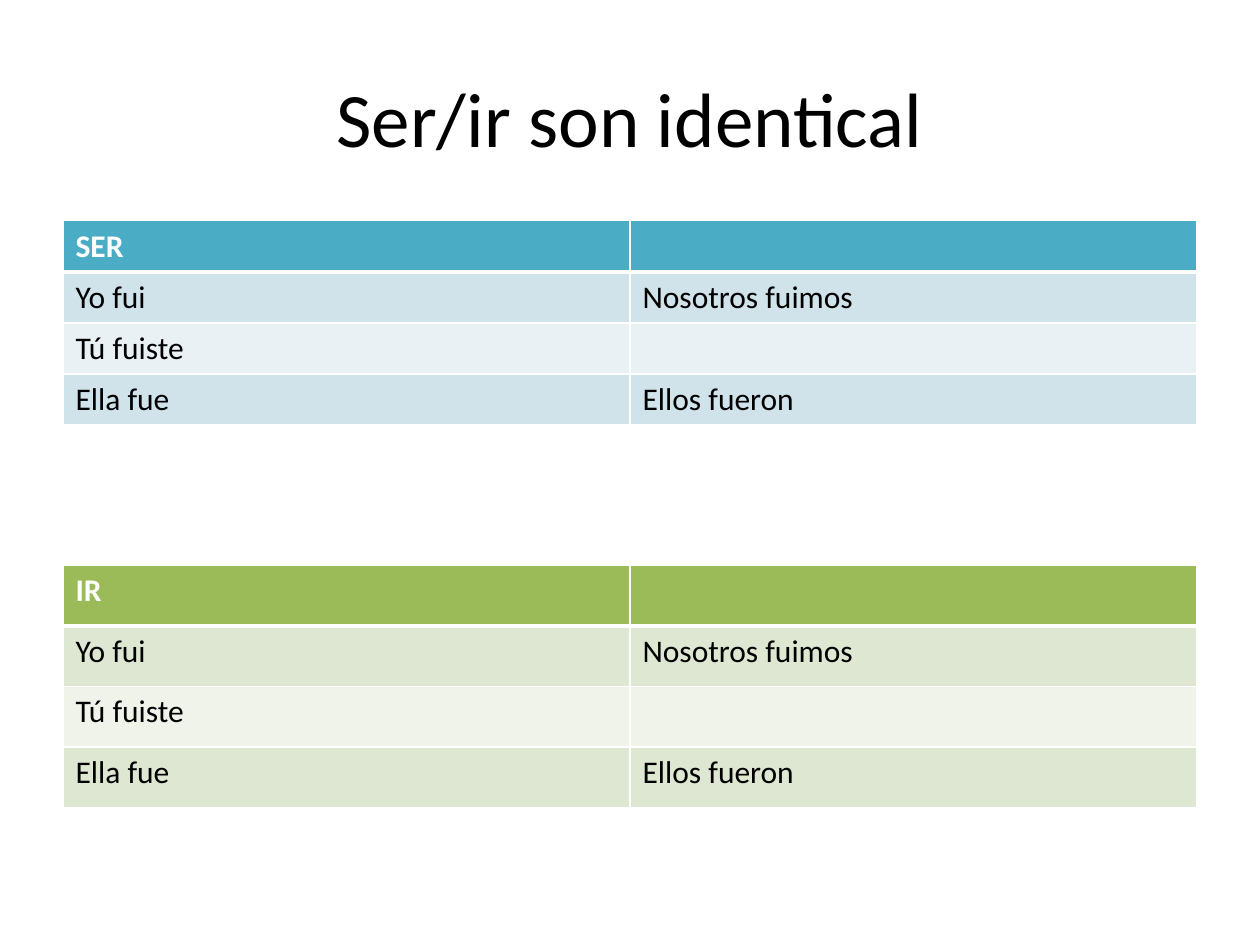
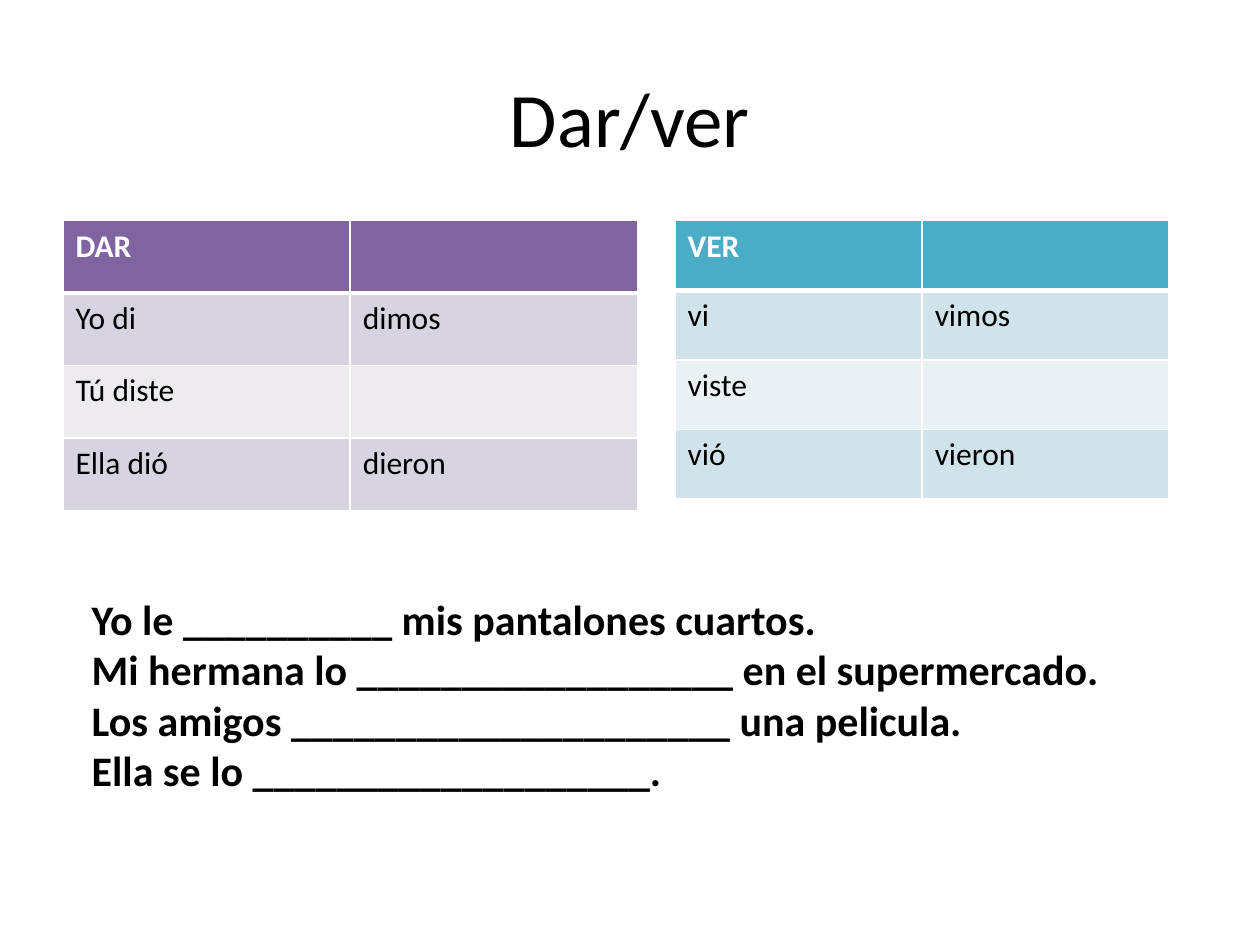
import pptx
import pptx.dml.color
import pptx.enum.text
import pptx.oxml
import pptx.oxml.ns
import pptx.util
from pptx.util import Cm

FONT = "Calibri"
BLACK, WHITE = "000000", "FFFFFF"
TITLE_BOX = (1.27, 0.76, 22.86, 3.18)

# header, odd rows, even rows
AQUA = ("4BACC6", "D0E3EA", "E9F1F5")
GREEN = ("9BBB59", "DEE7D1", "EFF3EA")
PURPLE = ("8064A2", "D8D3E0", "EDEAF0")

FUI_FORMS = [("Yo fui", "Nosotros fuimos"), ("Tú fuiste", ""), ("Ella fue", "Ellos fueron")]
DI_FORMS = [("Yo di", "dimos"), ("Tú diste", ""), ("Ella dió", "dieron")]
VI_FORMS = [("vi", "vimos"), ("viste", ""), ("vió", "vieron")]

# Boxes are left, top, width, height in centimetres
SLIDES = [
    {
        "title": "Ser/ir son identical",
        "verbs": [
            ("SER", FUI_FORMS, AQUA, (1.27, 4.45, 22.86, 4.12)),
            ("IR", FUI_FORMS, GREEN, (1.27, 11.4, 22.86, 4.88)),
        ],
    },
    {
        "title": "Dar/ver",
        "verbs": [
            ("DAR", DI_FORMS, PURPLE, (1.27, 4.45, 11.58, 5.84)),
            ("VER", VI_FORMS, AQUA, (13.61, 4.45, 9.96, 5.61)),
        ],
        "exercise": [
            "Yo le __________ mis pantalones cuartos.",
            "Mi hermana lo __________________ en el supermercado.",
            "Los amigos _____________________ una pelicula.",
            "Ella se lo ___________________.",
        ],
        "exercise_box": (1.6, 11.84, 22.53, 4.37),
    },
]


def rgb(value):
    return pptx.dml.color.RGBColor.from_string(value)


def add_run(paragraph, text, size, color=BLACK, bold=False):
    run = paragraph.add_run()
    run.text = text
    run.font.name = FONT
    run.font.size = pptx.util.Pt(size)
    run.font.bold = bold
    run.font.color.rgb = rgb(color)


def add_lines(slide, box, lines, size, bold=False):
    """Add a text box with one paragraph per line and return its frame."""
    frame = slide.shapes.add_textbox(*map(Cm, box)).text_frame
    frame.word_wrap = True
    for index, line in enumerate(lines):
        paragraph = frame.add_paragraph() if index else frame.paragraphs[0]
        add_run(paragraph, line, size, bold=bold)
    return frame


def add_title(slide, title):
    frame = add_lines(slide, TITLE_BOX, [title], 44)
    frame.vertical_anchor = pptx.enum.text.MSO_ANCHOR.MIDDLE
    frame.paragraphs[0].alignment = pptx.enum.text.PP_ALIGN.CENTER


def set_borders(cell, top, bottom):
    """Draw white borders; top and bottom widths are in points."""
    properties = cell._tc.get_or_add_tcPr()
    for side, width in (("L", 1), ("R", 1), ("T", top), ("B", bottom)):
        properties.append(pptx.oxml.parse_xml(
            f'<a:ln{side} {pptx.oxml.ns.nsdecls("a")} w="{pptx.util.Pt(width)}">'
            f'<a:solidFill><a:srgbClr val="{WHITE}"/></a:solidFill></a:ln{side}>'))


def add_verb_table(slide, verb, forms, palette, box):
    rows = [(verb, "")] + forms
    header, odd, even = palette
    left, top, width, height = map(Cm, box)
    table = slide.shapes.add_table(len(rows), 2, left, top, width, height).table
    for r, row in enumerate(rows):
        is_header = r == 0
        fill = header if is_header else odd if r % 2 else even
        for c, text in enumerate(row):
            cell = table.cell(r, c)
            set_borders(cell, top=3 if r == 1 else 1, bottom=3 if is_header else 1)
            cell.fill.solid()
            cell.fill.fore_color.rgb = rgb(fill)
            if text:
                add_run(cell.text_frame.paragraphs[0], text, 18,
                        WHITE if is_header else BLACK, is_header)


def main():
    deck = pptx.Presentation()
    deck.slide_width, deck.slide_height = Cm(25.4), Cm(19.05)
    for content in SLIDES:
        slide = deck.slides.add_slide(deck.slide_layouts[6])
        add_title(slide, content["title"])
        for verb_table in content["verbs"]:
            add_verb_table(slide, *verb_table)
        if "exercise" in content:
            add_lines(slide, content["exercise_box"], content["exercise"], 24, bold=True)
    deck.save("out.pptx")


if __name__ == "__main__":
    main()
